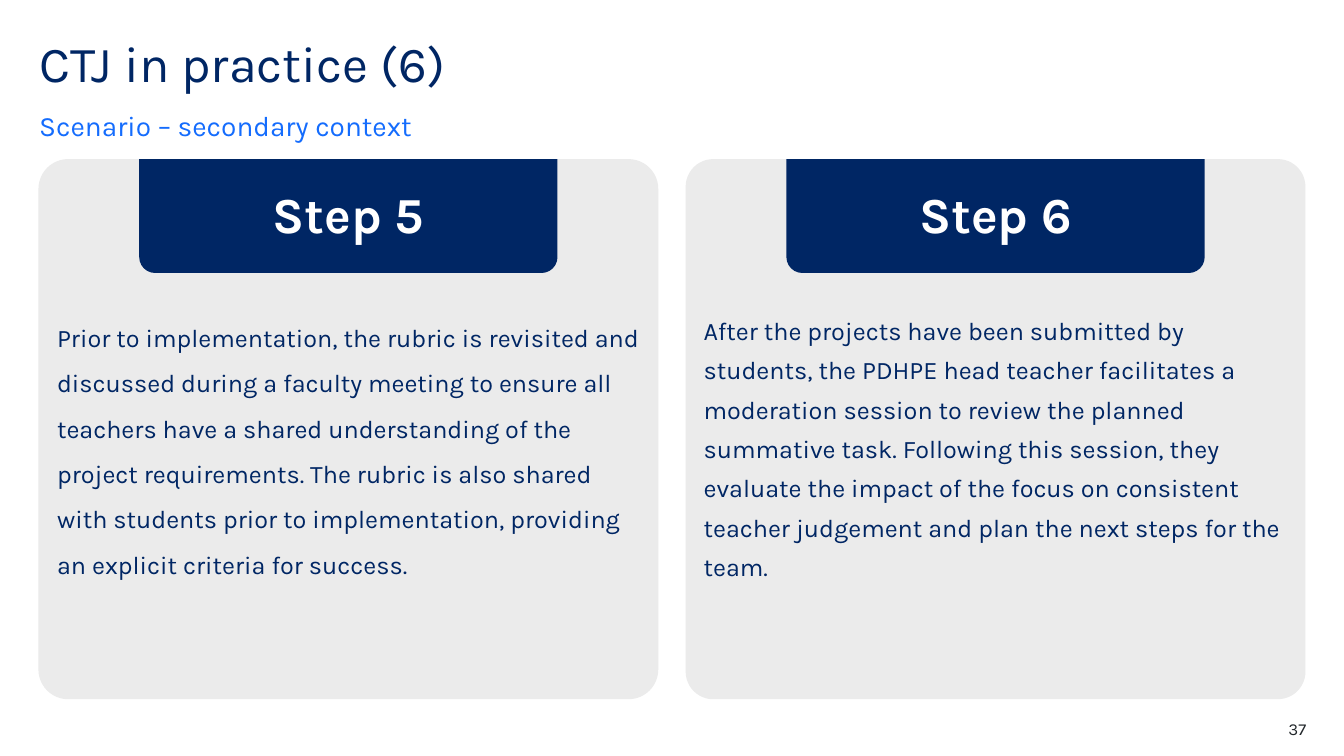
from pptx import Presentation
from pptx.dml.color import RGBColor
from pptx.enum.shapes import MSO_SHAPE
from pptx.enum.text import MSO_ANCHOR, PP_ALIGN
from pptx.util import Cm, Pt

CARD = MSO_SHAPE.ROUNDED_RECTANGLE
TAB = MSO_SHAPE.ROUND_2_SAME_RECTANGLE
TOP, MIDDLE, BOTTOM = MSO_ANCHOR.TOP, MSO_ANCHOR.MIDDLE, MSO_ANCHOR.BOTTOM
LEFT, CENTER, RIGHT = PP_ALIGN.LEFT, PP_ALIGN.CENTER, PP_ALIGN.RIGHT

# Content
TITLE = "CTJ in practice (6)"
SUBTITLE = "Scenario – secondary context"
PAGE = "37"
# heading, body, line spacing, space after (pt), corner ratio
STEPS = [
    ("Step 5",
     "Prior to implementation, the rubric is revisited and discussed during a "
     "faculty meeting to ensure all teachers have a shared understanding of the "
     "project requirements. The rubric is also shared with students prior to "
     "implementation, providing an explicit criteria for success.",
     1.5, 12, 0.055),
    ("Step 6",
     "After the projects have been submitted by students, the PDHPE head teacher "
     "facilitates a moderation session to review the planned summative task. "
     "Following this session, they evaluate the impact of the focus on consistent "
     "teacher judgement and plan the next steps for the team.",
     1.3, 0, 0.051),
]

# Style and layout (cm)
FONT = "Karla"
NAVY, BLUE, GREY, WHITE, INK = "002664", "146CFD", "EBEBEB", "FFFFFF", "22272B"
CARD_X, CARD_Y, CARD_W, CARD_H, CARD_GAP = 0.97, 4.01, 15.62, 13.61, 0.69
TAB_W, TAB_H, TAB_CORNER = 10.54, 2.87, 0.14
NO_INSETS = (0, 0, 0, 0)
CARD_INSETS = (0.25, 3.51, 0.25, 0.13)
TAB_INSETS = (0.25, 0.13, 0.25, 0.13)


def color(value):
    return RGBColor.from_string(value)


def write(sp, text, size, ink, insets=NO_INSETS, anchor=TOP, align=LEFT,
          spacing=1.0, after=0, bold=False):
    tf = sp.text_frame
    tf.word_wrap = True
    tf.vertical_anchor = anchor
    tf.margin_left, tf.margin_top, tf.margin_right, tf.margin_bottom = map(Cm, insets)
    p = tf.paragraphs[0]
    p.text = text
    p.alignment = align
    p.line_spacing = spacing
    p.space_after = Pt(after)
    p.font.name = FONT
    p.font.size = Pt(size)
    p.font.bold = bold
    p.font.color.rgb = color(ink)


def add_text(s, box, text, size, ink, **style):
    write(s.shapes.add_textbox(*map(Cm, box)), text, size, ink, **style)


def add_block(s, kind, box, fill, corners):
    sp = s.shapes.add_shape(kind, *map(Cm, box))
    sp.shadow.inherit = False
    sp.fill.solid()
    sp.fill.fore_color.rgb = color(fill)
    sp.line.fill.background()
    for i, corner in enumerate(corners):
        sp.adjustments[i] = corner
    return sp


prs = Presentation()
prs.slide_width, prs.slide_height = Cm(33.87), Cm(19.05)
s = prs.slides.add_slide(prs.slide_layouts[6])

# Heading
add_text(s, (0.99, 0.99, 28, 1.52), TITLE, 36, NAVY, spacing=0.9)
add_text(s, (0.99, 2.72, 28, 0.86), SUBTITLE, 20, BLUE,
         anchor=BOTTOM, spacing=1.5, after=12)

# Step cards, each with a tab centred on its top edge
for i, (heading, body, spacing, after, corner) in enumerate(STEPS):
    x = CARD_X + i * (CARD_W + CARD_GAP)
    card = add_block(s, CARD, (x, CARD_Y, CARD_W, CARD_H), GREY, [corner])
    write(card, body, 18, NAVY, CARD_INSETS, spacing=spacing, after=after)
    tab_x = x + (CARD_W - TAB_W) / 2
    tab = add_block(s, TAB, (tab_x, CARD_Y, TAB_W, TAB_H), NAVY, [0, TAB_CORNER])
    write(tab, heading, 36, WHITE, TAB_INSETS, MIDDLE, CENTER, bold=True)

# Page number
add_text(s, (30.91, 18.11, 2.01, 0.51), PAGE, 12, INK, align=RIGHT)

prs.save("out.pptx")
